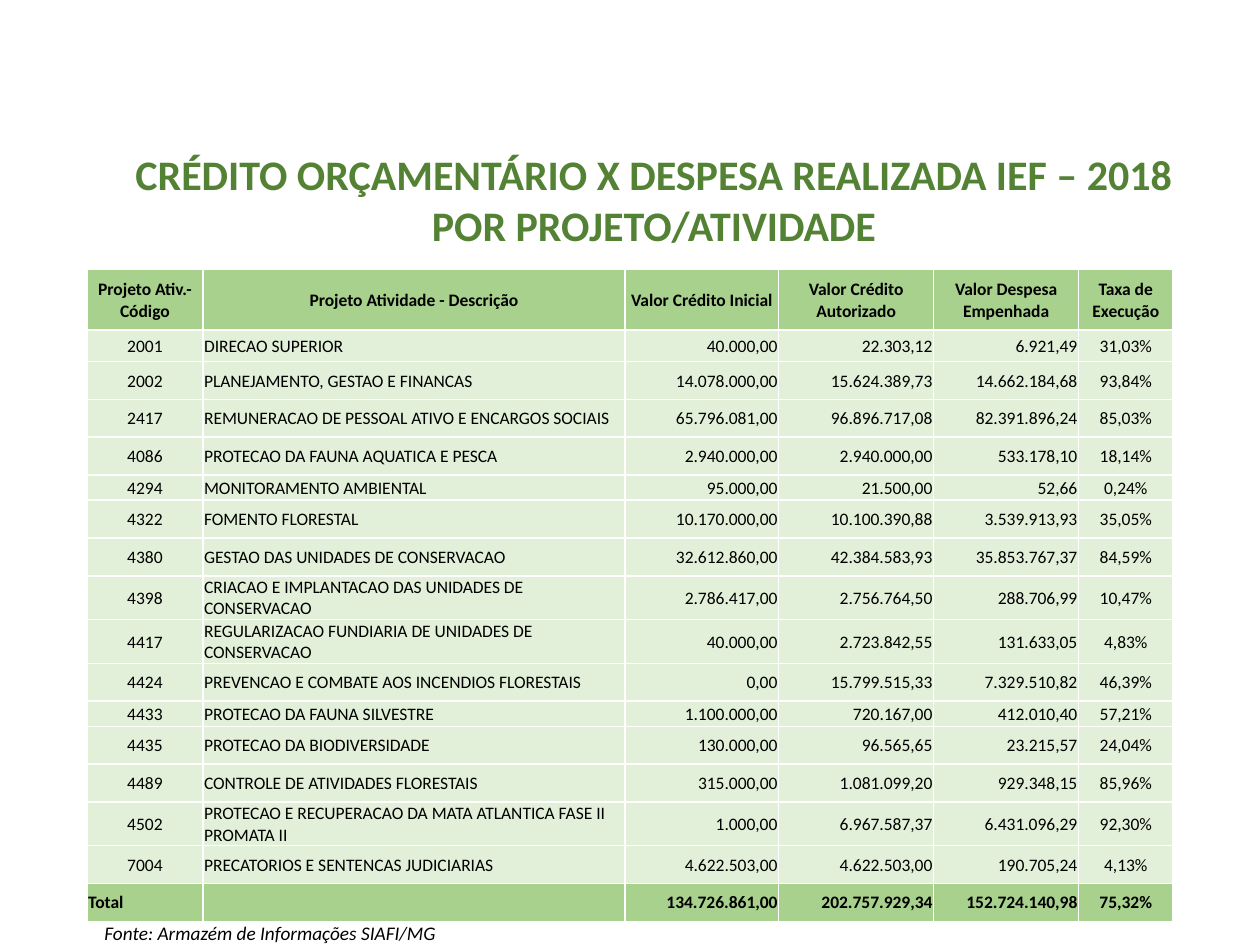
import pptx
import pptx.dml.color
import pptx.enum.text
import pptx.oxml.ns
import pptx.util
from lxml import etree

Inches = pptx.util.Inches
Pt = pptx.util.Pt
ALIGN = pptx.enum.text.PP_ALIGN
ANCHOR = pptx.enum.text.MSO_ANCHOR

THEME = {
    "font": "Calibri",
    "title": "548235",
    "text": "000000",
    "strong": "A9D18E",
    "light": "E2F0D9",
    "border": "FFFFFF",
    "title_size": 24,
    "table_size": 10,
    "source_size": 11,
}

TITLE = ["CRÉDITO ORÇAMENTÁRIO X DESPESA REALIZADA IEF – 2018", "POR PROJETO/ATIVIDADE"]
SOURCE = "Fonte: Armazém de Informações SIAFI/MG"

COLUMNS = [
    ("Projeto Ativ.- Código", 0.92, ALIGN.CENTER),
    ("Projeto Atividade - Descrição", 3.35, ALIGN.LEFT),
    ("Valor Crédito Inicial", 1.22, ALIGN.RIGHT),
    ("Valor Crédito Autorizado", 1.23, ALIGN.RIGHT),
    ("Valor Despesa Empenhada", 1.15, ALIGN.RIGHT),
    ("Taxa de Execução", 0.75, ALIGN.CENTER),
]
PROJECTS = [
    ("2001", "DIRECAO SUPERIOR", "40.000,00", "22.303,12", "6.921,49", "31,03%"),
    ("2002", "PLANEJAMENTO, GESTAO E FINANCAS", "14.078.000,00", "15.624.389,73", "14.662.184,68", "93,84%"),
    ("2417", "REMUNERACAO DE PESSOAL ATIVO E ENCARGOS SOCIAIS", "65.796.081,00", "96.896.717,08", "82.391.896,24", "85,03%"),
    ("4086", "PROTECAO DA FAUNA AQUATICA E PESCA", "2.940.000,00", "2.940.000,00", "533.178,10", "18,14%"),
    ("4294", "MONITORAMENTO AMBIENTAL", "95.000,00", "21.500,00", "52,66", "0,24%"),
    ("4322", "FOMENTO FLORESTAL", "10.170.000,00", "10.100.390,88", "3.539.913,93", "35,05%"),
    ("4380", "GESTAO DAS UNIDADES DE CONSERVACAO", "32.612.860,00", "42.384.583,93", "35.853.767,37", "84,59%"),
    ("4398", "CRIACAO E IMPLANTACAO DAS UNIDADES DE CONSERVACAO", "2.786.417,00", "2.756.764,50", "288.706,99", "10,47%"),
    ("4417", "REGULARIZACAO FUNDIARIA DE UNIDADES DE CONSERVACAO", "40.000,00", "2.723.842,55", "131.633,05", "4,83%"),
    ("4424", "PREVENCAO E COMBATE AOS INCENDIOS FLORESTAIS", "0,00", "15.799.515,33", "7.329.510,82", "46,39%"),
    ("4433", "PROTECAO DA FAUNA SILVESTRE", "1.100.000,00", "720.167,00", "412.010,40", "57,21%"),
    ("4435", "PROTECAO DA BIODIVERSIDADE", "130.000,00", "96.565,65", "23.215,57", "24,04%"),
    ("4489", "CONTROLE DE ATIVIDADES FLORESTAIS", "315.000,00", "1.081.099,20", "929.348,15", "85,96%"),
    ("4502", "PROTECAO E RECUPERACAO DA MATA ATLANTICA FASE II PROMATA II", "1.000,00", "6.967.587,37", "6.431.096,29", "92,30%"),
    ("7004", "PRECATORIOS E SENTENCAS JUDICIARIAS", "4.622.503,00", "4.622.503,00", "190.705,24", "4,13%"),
]
TOTAL = ("Total", "", "134.726.861,00", "202.757.929,34", "152.724.140,98", "75,32%")

HEADER_HEIGHT = 0.48
ROW_HEIGHT = 0.3
SPECIAL_HEIGHTS = {"2001": 0.25, "4294": 0.2, "4433": 0.2, "4398": 0.33, "4417": 0.33, "4502": 0.33}


def rgb(name):
    return pptx.dml.color.RGBColor.from_string(THEME[name])


def style(paragraph, size, color, align, bold=False, italic=False):
    paragraph.alignment = align
    font = paragraph.font
    font.name = THEME["font"]
    font.size = Pt(THEME[size])
    font.color.rgb = rgb(color)
    font.bold = bold
    font.italic = italic


def add_borders(cell):
    properties = cell._tc.get_or_add_tcPr()
    for side in ("a:lnL", "a:lnR", "a:lnT", "a:lnB"):
        line = etree.SubElement(properties, pptx.oxml.ns.qn(side), w=str(Pt(1)))
        fill = etree.SubElement(line, pptx.oxml.ns.qn("a:solidFill"))
        etree.SubElement(fill, pptx.oxml.ns.qn("a:srgbClr"), val=THEME["border"])


def fill_cell(cell, text, align, strong):
    cell.margin_left = cell.margin_right = cell.margin_top = Inches(0.01)
    cell.margin_bottom = 0
    cell.vertical_anchor = ANCHOR.MIDDLE
    add_borders(cell)
    cell.fill.solid()
    cell.fill.fore_color.rgb = rgb("strong" if strong else "light")
    cell.text = text
    paragraph = cell.text_frame.paragraphs[0]
    style(paragraph, "table_size", "text", align, bold=strong)
    if not text:
        etree.SubElement(paragraph._p, pptx.oxml.ns.qn("a:endParaRPr"), sz=str(THEME["table_size"] * 100))


def add_title(slide):
    title = slide.shapes.title
    title.left, title.top, title.width, title.height = map(Inches, (0.69, 1.13, 9, 0.87))
    frame = title.text_frame
    frame.text = "\n".join(TITLE)
    frame.word_wrap = True
    frame.auto_size = pptx.enum.text.MSO_AUTO_SIZE.NONE
    frame.vertical_anchor = ANCHOR.TOP
    for paragraph in frame.paragraphs:
        paragraph.space_before = Pt(0)
        style(paragraph, "title_size", "title", ALIGN.CENTER, bold=True)


def add_budget_table(slide):
    rows = [[heading for heading, _, _ in COLUMNS], *PROJECTS, TOTAL]
    heights = [HEADER_HEIGHT] + [SPECIAL_HEIGHTS.get(row[0], ROW_HEIGHT) for row in rows[1:]]
    width = sum(column[1] for column in COLUMNS)
    budget = slide.shapes.add_table(
        len(rows), len(COLUMNS), Inches(0.69), Inches(2.14), Inches(width), Inches(sum(heights))
    ).table
    budget.horz_banding = False
    for column, (_, column_width, _) in zip(budget.columns, COLUMNS):
        column.width = Inches(column_width)
    for r, (row, height) in enumerate(zip(rows, heights)):
        budget.rows[r].height = Inches(height)
        is_header, is_total = r == 0, r == len(rows) - 1
        for c, text in enumerate(row):
            align = COLUMNS[c][2]
            if is_header:
                align = ALIGN.CENTER
            elif is_total and c == 0:
                align = ALIGN.LEFT
            fill_cell(budget.cell(r, c), text, align, is_header or is_total)


def add_source(slide):
    frame = slide.shapes.add_textbox(Inches(0.73), Inches(7.3), Inches(7.95), Inches(0.2)).text_frame
    frame.word_wrap = True
    frame.vertical_anchor = ANCHOR.MIDDLE
    frame.text = SOURCE
    style(frame.paragraphs[0], "source_size", "text", ALIGN.LEFT, italic=True)


def main():
    deck = pptx.Presentation()
    deck.slide_width, deck.slide_height = Inches(10), Inches(7.5)
    slide = deck.slides.add_slide(deck.slide_layouts[5])
    add_title(slide)
    add_budget_table(slide)
    add_source(slide)
    deck.save("out.pptx")


if __name__ == "__main__":
    main()
